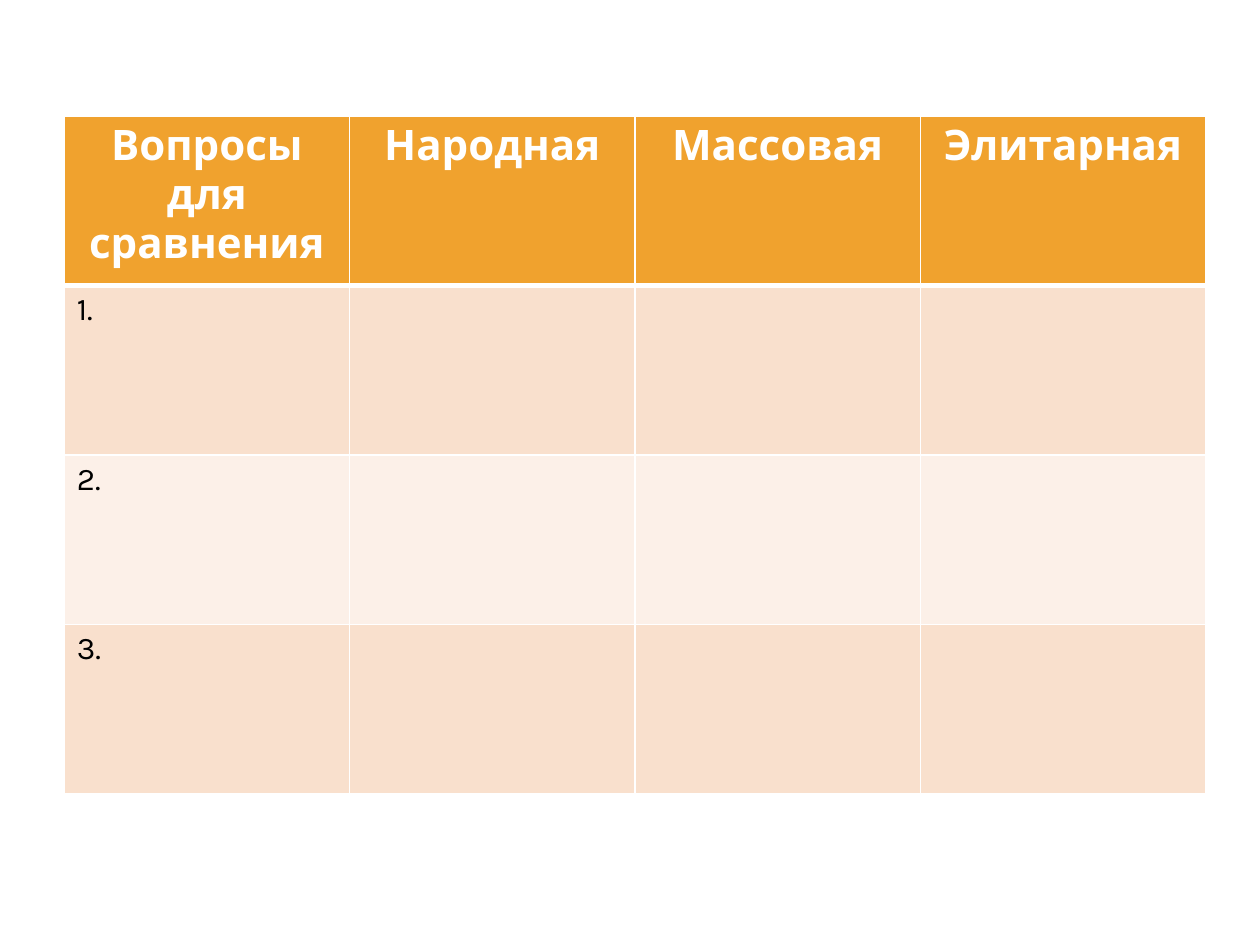
from lxml import etree
from pptx import Presentation
from pptx.dml.color import RGBColor
from pptx.enum.text import PP_ALIGN
from pptx.oxml.ns import qn
from pptx.util import Inches, Pt

CENTER, LEFT = PP_ALIGN.CENTER, PP_ALIGN.LEFT
FONT = "Karla"
WHITE, BLACK, ORANGE = "FFFFFF", "000000", "F0A22E"
BANDS = ["F9E0CD", "FCF0E8"]
HEADINGS = ["Вопросы для сравнения", "Народная", "Массовая", "Элитарная"]
QUESTIONS = ["1.", "2.", "3."]


def color(value):
    return RGBColor.from_string(value)


def set_borders(cell, widths):
    """Draw white borders; widths maps L, R, T and B to points."""
    properties = cell._tc.get_or_add_tcPr()
    for side, width in widths.items():
        line = etree.SubElement(properties, qn(f"a:ln{side}"), w=str(Pt(width)))
        fill = etree.SubElement(line, qn("a:solidFill"))
        etree.SubElement(fill, qn("a:srgbClr"), val=WHITE)


def style_cell(cell, text, fill, ink, size, bold, align, top, bottom):
    # Borders precede the fill in the cell properties
    set_borders(cell, {"L": 1, "R": 1, "T": top, "B": bottom})
    cell.fill.solid()
    cell.fill.fore_color.rgb = color(fill)
    para = cell.text_frame.paragraphs[0]
    para.alignment = align
    if text:
        para.text = text
    para.font.name = FONT
    para.font.size = Pt(size)
    para.font.bold = bold
    para.font.color.rgb = color(ink)


def add_comparison_table(page, left, top, width, height):
    rows, columns = len(QUESTIONS) + 1, len(HEADINGS)
    table = page.shapes.add_table(rows, columns, left, top, width, height).table

    # Header row with a thick rule below
    for column, heading in enumerate(HEADINGS):
        style_cell(table.cell(0, column), heading, ORANGE, WHITE, 24, True, CENTER, 1, 3)

    # Banded question rows with empty answer cells
    for row, question in enumerate(QUESTIONS, start=1):
        for column in range(columns):
            text = question if column == 0 else ""
            style_cell(table.cell(row, column), text, BANDS[(row - 1) % 2], BLACK,
                       18, False, LEFT, 3 if row == 1 else 1, 1)


def main():
    deck = Presentation()
    deck.slide_width, deck.slide_height = Inches(10), Inches(7.5)
    page = deck.slides.add_slide(deck.slide_layouts[6])
    add_comparison_table(page, Inches(0.51), Inches(0.92), Inches(9.06), Inches(5.38))
    deck.save("out.pptx")


if __name__ == "__main__":
    main()
